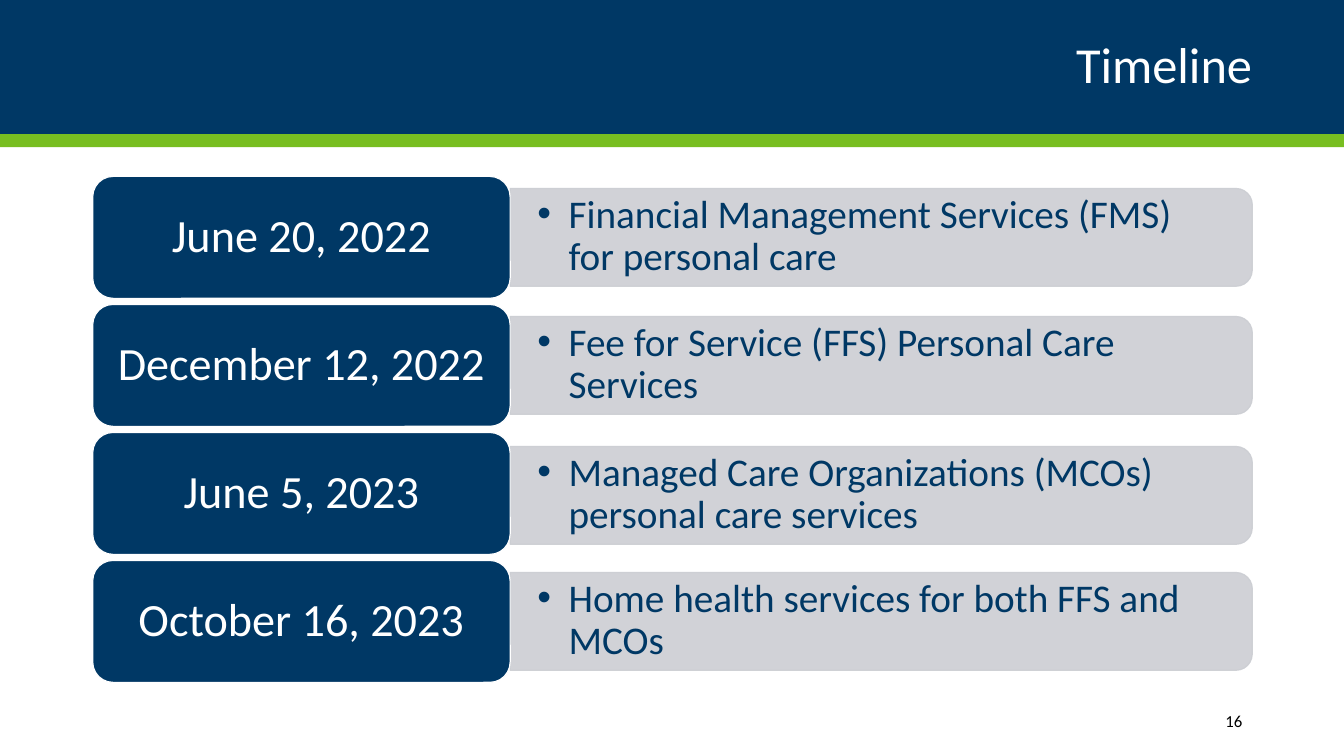
from dataclasses import dataclass

from lxml.etree import SubElement
from pptx import Presentation
from pptx.dml.color import RGBColor
from pptx.enum.shapes import MSO_SHAPE
from pptx.enum.text import MSO_ANCHOR, PP_ALIGN
from pptx.oxml.ns import qn
from pptx.util import Inches, Pt


@dataclass(frozen=True)
class Theme:
    """Colours, font and type sizes of the slide."""
    navy: str = "003865"
    green: str = "78BE21"
    grey: str = "CCCED3"
    white: str = "FFFFFF"
    black: str = "000000"
    font: str = "Calibri"
    title: int = 36
    date: int = 33
    detail: int = 28
    number: int = 12


THEME = Theme()
LEFT, TOP, PITCH = 0.92, 1.75, 1.27
DATE_W, DATE_H = 4.14, 1.21
BAR_W, BAR_H = 7.36, 0.97
MILESTONES = [
    ("June 20, 2022", "Financial Management Services (FMS)\vfor personal care", 0),
    ("December 12, 2022", "Fee for Service (FFS) Personal Care Services", 0),
    ("June 5, 2023", "Managed Care Organizations (MCOs) personal care services", 0.02),
    ("October 16, 2023", "Home health services for both FFS and MCOs", 0),
]


def write(sp, text, *, size, color, align=PP_ALIGN.LEFT, spacing=1.0, inset=(0.1, 0.05), indent=0):
    """Fill a shape with one formatted paragraph, bulleted when indented."""
    tf = sp.text_frame
    tf.word_wrap = True
    tf.vertical_anchor = MSO_ANCHOR.MIDDLE
    tf.margin_left = tf.margin_right = Inches(inset[0])
    tf.margin_top = tf.margin_bottom = Inches(inset[1])
    p = tf.paragraphs[0]
    p.text = text
    p.alignment = align
    p.line_spacing = spacing
    for r in p.runs:
        r.font.name = THEME.font
        r.font.size = Pt(size)
        r.font.color.rgb = RGBColor.from_string(color)
    if indent:
        pPr = p._p.get_or_add_pPr()
        pPr.set("marL", str(Inches(indent)))
        pPr.set("indent", str(-Inches(indent)))
        SubElement(pPr, qn("a:buFont"), typeface="Arial")
        SubElement(pPr, qn("a:buChar"), char="•")


def add_block(s, kind, x, y, w, h, fill, line=None, alpha=None):
    """Add a flat preset shape with an optional outline and opacity in percent."""
    sp = s.shapes.add_shape(kind, Inches(x), Inches(y), Inches(w), Inches(h))
    sp.shadow.inherit = False
    sp.fill.solid()
    sp.fill.fore_color.rgb = RGBColor.from_string(fill)
    if line:
        sp.line.color.rgb = RGBColor.from_string(line)
        sp.line.width = Pt(0.85)
    else:
        sp.line.fill.background()
    if alpha:
        for clr in sp.element.spPr.iter(qn("a:srgbClr")):
            SubElement(clr, qn("a:alpha"), val=str(alpha * 1000))
    return sp


def add_label(s, x, y, w, h, text, **fmt):
    """Add a text box."""
    tb = s.shapes.add_textbox(Inches(x), Inches(y), Inches(w), Inches(h))
    write(tb, text, **fmt)


def add_header(s, text):
    """Add the header bands and set the title over them."""
    add_block(s, MSO_SHAPE.RECTANGLE, 0, 0, 13.33, 1.33, THEME.navy)
    add_block(s, MSO_SHAPE.RECTANGLE, 0, 1.33, 13.33, 0.13, THEME.green)
    title = s.shapes.title
    title.left, title.top = Inches(LEFT), Inches(0)
    title.width, title.height = Inches(11.5), Inches(1.33)
    write(title, text, size=THEME.title, color=THEME.white, align=PP_ALIGN.RIGHT,
          spacing=0.9, inset=(0, 0.05))
    title.element.getparent().append(title.element)


def add_milestone(s, y, date, detail, shift):
    """Add one row: a date block and its bar with a bulleted detail."""
    bar_x = LEFT + DATE_W
    mid = y + DATE_H / 2 + shift
    bar = add_block(s, MSO_SHAPE.ROUND_2_SAME_RECTANGLE, bar_x + (BAR_W - BAR_H) / 2,
                    mid - BAR_W / 2, BAR_H, BAR_W, THEME.grey, THEME.grey, alpha=90)
    bar.rotation = 90
    add_label(s, bar_x, mid - 0.44, 7.31, 0.87, detail, size=THEME.detail,
              color=THEME.navy, spacing=0.9, inset=(0.27, 0), indent=0.31)
    block = add_block(s, MSO_SHAPE.ROUNDED_RECTANGLE, LEFT, y, DATE_W, DATE_H,
                      THEME.navy, THEME.white)
    write(block, date, size=THEME.date, color=THEME.white, align=PP_ALIGN.CENTER,
          spacing=0.9, inset=(0.14, 0.07))


def main():
    """Build the timeline slide and save it."""
    prs = Presentation()
    prs.slide_width, prs.slide_height = Inches(13.33), Inches(7.5)
    s = prs.slides.add_slide(prs.slide_layouts[5])
    add_header(s, "Timeline")
    for i, (date, detail, shift) in enumerate(MILESTONES):
        add_milestone(s, TOP + i * PITCH, date, detail, shift)
    add_label(s, 10.82, 6.95, 1.6, 0.4, "16", size=THEME.number,
              color=THEME.black, align=PP_ALIGN.RIGHT)
    prs.save("out.pptx")


if __name__ == "__main__":
    main()
